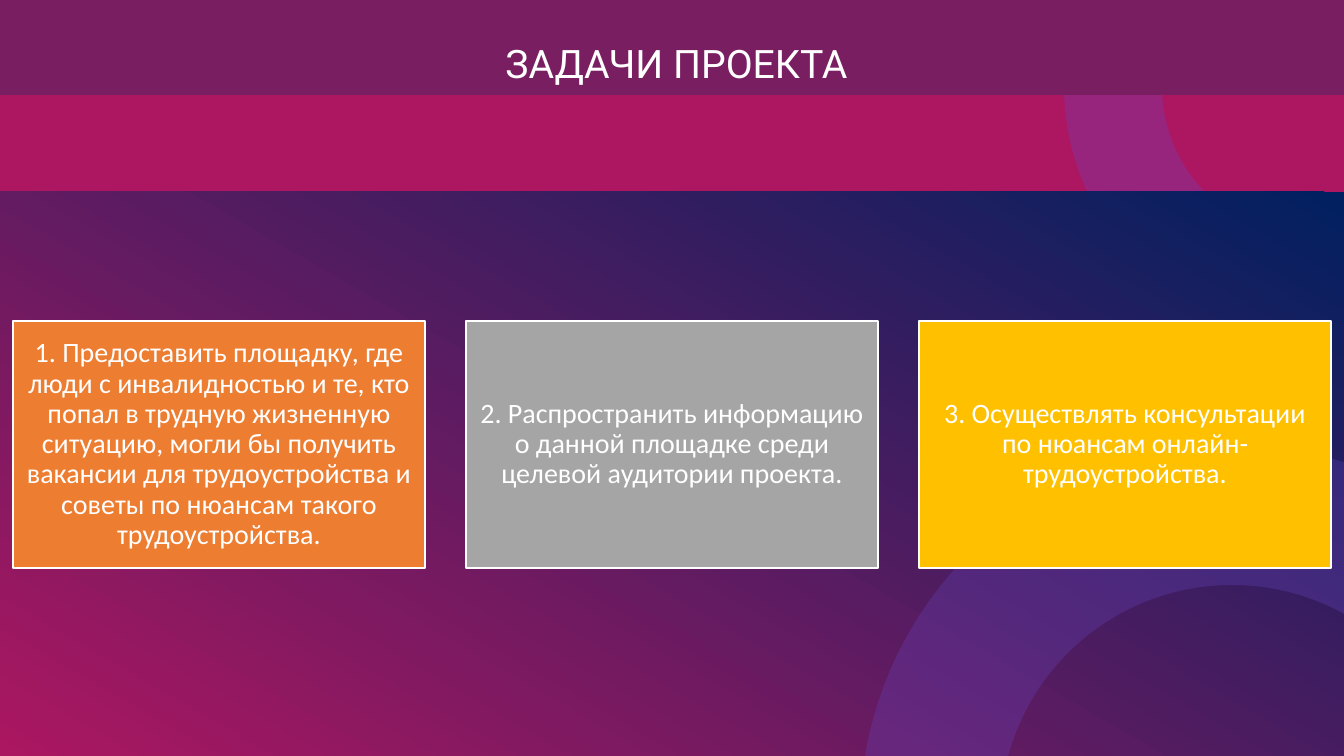
from pptx import Presentation
from pptx import util as u
from pptx.dml.color import RGBColor
from pptx.enum import shapes, text
from pptx.oxml.ns import qn
from lxml import etree

THEME = {
    "white": RGBColor(0xFF, 0xFF, 0xFF),
    "header": RGBColor(0x78, 0x1E, 0x61),
    "crimson": RGBColor(0xAD, 0x17, 0x61),
    "navy": RGBColor(0x00, 0x20, 0x60),
    "ring": RGBColor(0x65, 0x45, 0xBF),
    "cards": [RGBColor(0xED, 0x7D, 0x31), RGBColor(0xA5, 0xA5, 0xA5), RGBColor(0xFF, 0xC0, 0x00)],
    "title_font": "Roboto",
    "title_size": u.Pt(28),
    "card_font": "Calibri",
    "card_size": u.Pt(20),
}
TASKS = [
    "1. Предоставить площадку, где люди с инвалидностью и те, кто попал в трудную "
    "жизненную ситуацию, могли бы получить вакансии для трудоустройства и советы "
    "по нюансам такого трудоустройства.",
    "2. Распространить информацию о данной площадке среди целевой аудитории проекта.",
    "3. Осуществлять консультации по нюансам онлайн-трудоустройства.",
]
PX = 914400 / 100.8


def add_figure(kind, left, top, width, height, color=None):
    box = [u.Emu(round(n * PX)) for n in (left, top, width, height)]
    shape = slide.shapes.add_shape(kind, *box)
    shape.shadow.inherit = False
    shape.line.fill.background()
    if color is None:
        shape.fill.background()
    else:
        shape.fill.solid()
        shape.fill.fore_color.rgb = color
    return shape


def write(paragraph, words, font, size, spacing):
    paragraph.alignment = text.PP_ALIGN.CENTER
    paragraph.line_spacing = spacing
    run = paragraph.add_run()
    run.text = words
    run.font.name = font
    run.font.size = size
    run.font.color.rgb = THEME["white"]


presentation = Presentation()
presentation.slide_width = u.Emu(round(1344 * PX))
presentation.slide_height = u.Emu(round(756 * PX))
slide = presentation.slides.add_slide(presentation.slide_layouts[5])
RECTANGLE = shapes.MSO_SHAPE.RECTANGLE

# Background: each panel is followed by the ring that lies on it
panels = [
    ((0, 95, 1352, 101), (1113, -114, 401, 401), 70),
    ((0, 192, 1352, 577), (930, 515, 604, 604), 100),
]
for panel_box, ring_box, ring_width in panels:
    panel = add_figure(RECTANGLE, *panel_box, THEME["crimson"])
    ring = add_figure(shapes.MSO_SHAPE.OVAL, *ring_box)
    ring.line.color.rgb = THEME["ring"]
    ring.line.width = u.Pt(ring_width)
    ring_color = ring.line._ln.find(".//" + qn("a:srgbClr"))
    etree.SubElement(ring_color, qn("a:alpha"), val="30000")

# The lower panel fades from navy at top right to crimson at bottom left
panel.fill.gradient()
panel.fill.gradient_angle = 240
for stop, color, position in zip(panel.fill.gradient_stops, ("navy", "crimson"), (0, 1)):
    stop.color.rgb = THEME[color]
    stop.position = position

# Header and title
add_figure(RECTANGLE, 0, -2, 1344, 97, THEME["header"])
title = slide.shapes.title
slide.shapes._spTree.append(title._element)
title.left, title.top, title.width, title.height = [
    u.Emu(round(n * PX)) for n in (393, 31, 567, 61)
]
title.text_frame.vertical_anchor = text.MSO_ANCHOR.TOP
title.text_frame.auto_size = text.MSO_AUTO_SIZE.SHAPE_TO_FIT_TEXT
title_paragraph = title.text_frame.paragraphs[0]
title_paragraph.space_after = u.Pt(8)
write(title_paragraph, "ЗАДАЧИ ПРОЕКТА", THEME["title_font"], THEME["title_size"], 1.07)

# Task cards
for index, (task, color) in enumerate(zip(TASKS, THEME["cards"])):
    card = add_figure(RECTANGLE, 13 + index * 453, 321, 412, 247, color)
    card.line.color.rgb = THEME["white"]
    card.line.width = u.Pt(1)
    frame = card.text_frame
    frame.word_wrap = True
    frame.vertical_anchor = text.MSO_ANCHOR.MIDDLE
    frame.margin_left = frame.margin_right = u.Emu(round(8 * PX))
    frame.margin_top = frame.margin_bottom = u.Emu(round(8 * PX))
    write(frame.paragraphs[0], task, THEME["card_font"], THEME["card_size"], 0.9)

presentation.save("out.pptx")
